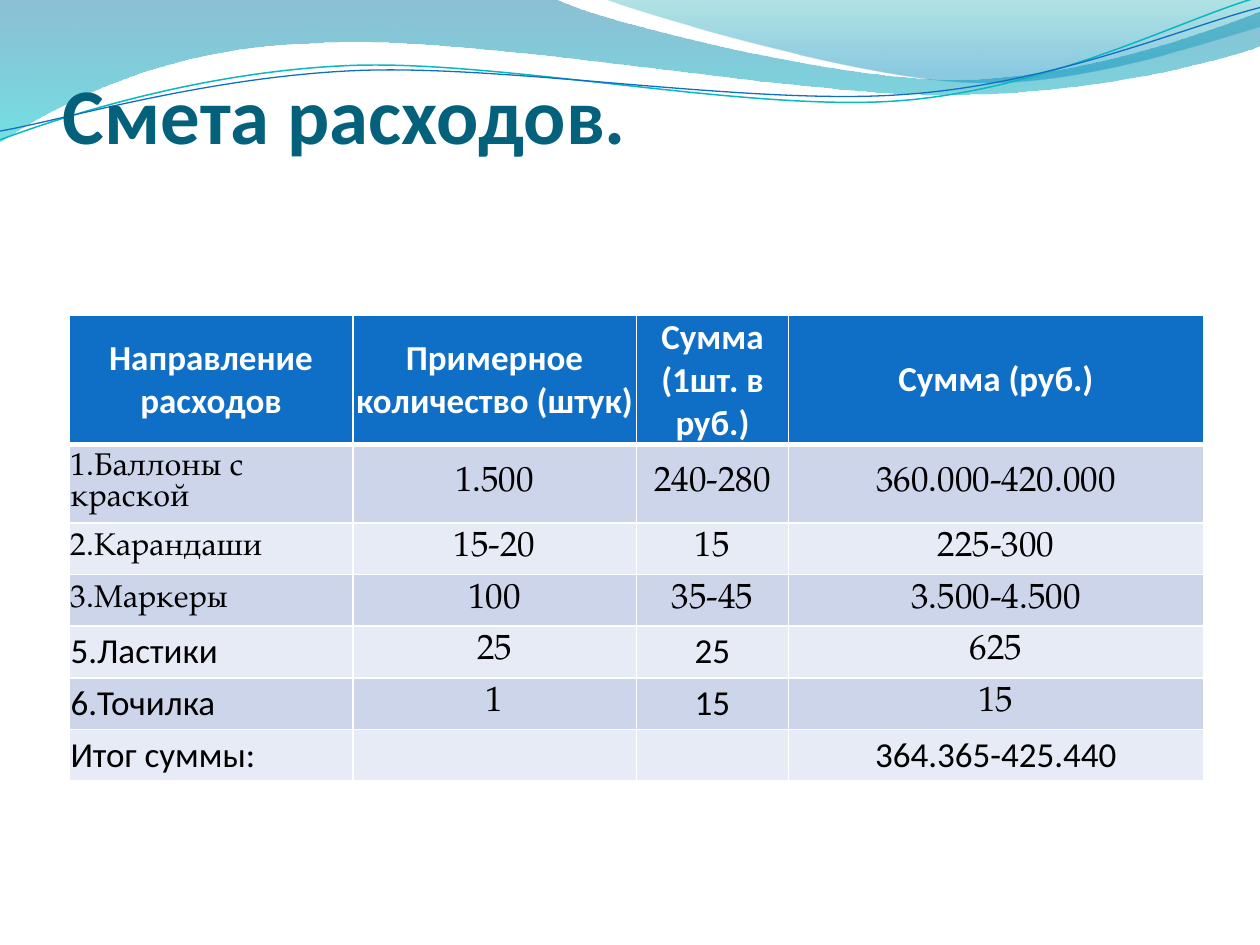
from math import cos, radians, sin

from lxml import etree
from pptx import Presentation
from pptx.dml.color import RGBColor
from pptx.enum.text import MSO_ANCHOR as Anchor, PP_ALIGN as Align
from pptx.oxml.ns import qn
from pptx.util import Inches, Pt

SANS, SERIF = "Calibri", "TeX Gyre Pagella"
LINE_TILT = -2.7
LINE_CENTER = (4.99, 0.58)

UPPER_WAVE = [
    [(0, 0)],
    [(4.4, -0.01)],
    [(4.76, 0.17), (6.64, 0.63), (7.58, 0.63)],
    [(8.53, 0.63), (9.58, 0.26), (10, 0.09)],
    [(10.01, 0.36)],
    [(9.83, 0.44), (8.7, 0.76), (7.46, 0.75)],
    [(6.22, 0.75), (3.82, 0.28), (2.57, 0.34)],
    [(1.29, 0.36), (0.46, 0.83), (-0.01, 1.13)],
    [(0, 0)],
]
RIGHT_WAVE = [
    [(4.79, -0.01)],
    [(5.09, 0.11), (6.82, 0.62), (7.69, 0.65)],
    [(8.56, 0.69), (9.61, 0.32), (10, 0.21)],
    [(10, 0)],
    [(4.79, -0.01)],
]
TEAL_LINE = [
    [(0, 1.11)],
    [(0.48, 0.93), (1.58, 0.57), (2.77, 0.52)],
    [(3.95, 0.47), (5.93, 0.89), (7.13, 0.8)],
    [(8.33, 0.71), (9.38, 0.15), (9.98, -0.02)],
]
BLUE_LINE = [
    [(0, 1.04)],
    [(0.47, 0.96), (1.64, 0.61), (2.83, 0.56)],
    [(4.03, 0.51), (5.97, 0.84), (7.17, 0.75)],
    [(8.36, 0.67), (9.41, 0.21), (10, 0.06)],
]

HEADERS = ["Направление расходов", "Примерное количество (штук)",
           "Сумма (1шт. в руб.)", "Сумма (руб.)"]
EXPENSES = [
    ["1.Баллоны с краской", "1.500", "240-280", "360.000-420.000"],
    ["2.Карандаши", "15-20", "15", "225-300"],
    ["3.Маркеры", "100", "35-45", "3.500-4.500"],
    ["5.Ластики", "25", "25", "625"],
    ["6.Точилка", "1", "15", "15"],
    ["Итог суммы:", "", "", "364.365-425.440"],
]
SERIF_ROWS = [1, 2, 3]
MIXED_ROWS = [4, 5]


def color(value):
    return RGBColor.from_string(value)


def level(point):
    angle = radians(-LINE_TILT)
    dx, dy = (value - middle for value, middle in zip(point, LINE_CENTER))
    return (LINE_CENTER[0] + dx * cos(angle) - dy * sin(angle),
            LINE_CENTER[1] + dx * sin(angle) + dy * cos(angle))


def add_curve(slide, left, top, segments, closed):
    points = [(Inches(left + x), Inches(top + y)) for segment in segments for x, y in segment]
    builder = slide.shapes.build_freeform(*points[0])
    builder.add_line_segments(points[1:], close=closed)
    shape = builder.convert_to_shape()
    shape.shadow.inherit = False
    steps = iter(list(shape._element.iter(qn("a:lnTo"))))
    for segment in segments[1:]:
        parts = [next(steps) for _ in segment]
        if len(parts) == 3:
            curve = etree.Element(qn("a:cubicBezTo"))
            parts[0].addprevious(curve)
            for part in parts:
                curve.append(part[0])
                part.getparent().remove(part)
    return shape


def add_wave(slide, left, top, segments, stops):
    shape = add_curve(slide, left, top, segments, True)
    shape.line.fill.background()
    shape.fill.gradient()
    shape.fill.gradient_angle = 270
    for stop, (position, value, _) in zip(shape.fill.gradient_stops, stops):
        stop.position = position
        stop.color.rgb = color(value)
    for node, (_, _, opacity) in zip(shape._element.spPr.iter(qn("a:srgbClr")), stops):
        etree.SubElement(node, qn("a:alpha")).set("val", str(opacity * 1000))


def add_wave_line(slide, left, top, segments, value, width):
    leveled = [[level(point) for point in segment] for segment in segments]
    shape = add_curve(slide, left, top, leveled, False)
    shape.rotation = LINE_TILT
    shape.fill.background()
    shape.line.color.rgb = color(value)
    shape.line.width = Pt(width)


def add_header_waves(slide, left, top):
    add_wave(slide, left, top, UPPER_WAVE, [(0, "0074A1", 45), (1, "00C6CF", 55)])
    add_wave(slide, left, top, RIGHT_WAVE, [(0, "00A1A9", 30), (0.8, "008BBF", 45)])
    add_wave_line(slide, left, top, TEAL_LINE, "0AB8BF", 0.85)
    add_wave_line(slide, left, top, BLUE_LINE, "0F6FC6", 0.75)


def style_font(font, name, size, value, bold=False):
    font.name, font.size, font.bold = name, Pt(size), bold
    font.color.rgb = color(value)


def add_title(slide, left, top, width, height):
    box = slide.shapes.add_textbox(Inches(left), Inches(top), Inches(width), Inches(height))
    frame = box.text_frame
    frame.word_wrap = True
    frame.vertical_anchor = Anchor.BOTTOM
    frame.margin_left = frame.margin_right = frame.margin_bottom = 0
    paragraph = frame.paragraphs[0]
    paragraph.text = "Смета расходов. \v"
    style_font(paragraph.font, SANS, 45, "04617B", True)


def set_borders(cell, widths):
    properties = cell._tc.get_or_add_tcPr()
    for index, (side, width) in enumerate(zip("LRTB", widths)):
        line = etree.Element(qn(f"a:ln{side}"), w=str(Pt(width)))
        fill = etree.SubElement(line, qn("a:solidFill"))
        etree.SubElement(fill, qn("a:srgbClr")).set("val", "FFFFFF")
        properties.insert(index, line)


def fill_cell(cell, text, row, column):
    header = row == 0
    serif = row in SERIF_ROWS or (row in MIXED_ROWS and column in (1, 3))
    cell.margin_left = cell.margin_right = cell.margin_top = cell.margin_bottom = Inches(0.01)
    cell.vertical_anchor = Anchor.MIDDLE
    cell.fill.solid()
    cell.fill.fore_color.rgb = color("0F6FC6" if header else ("E7EBF5", "CCD5EA")[row % 2])
    set_borders(cell, [1, 1, 3 if row == 1 else 1, 3 if header else 1])
    paragraph = cell.text_frame.paragraphs[0]
    paragraph.text = text
    paragraph.alignment = Align.CENTER if header or column else Align.LEFT
    size = 18 if row in SERIF_ROWS and column == 0 else 20
    style_font(paragraph.font, SERIF if serif else SANS, size,
               "FFFFFF" if header else "000000", header)


def add_expense_table(slide, left, top, column_widths, header_height, row_height):
    rows = [HEADERS] + EXPENSES
    heights = [header_height] + [row_height] * len(EXPENSES)
    table = slide.shapes.add_table(
        len(rows), len(HEADERS), Inches(left), Inches(top),
        Inches(sum(column_widths)), Inches(sum(heights))).table
    for column, width in zip(table.columns, column_widths):
        column.width = Inches(width)
    for row, texts in enumerate(rows):
        table.rows[row].height = Inches(heights[row])
        for column, text in enumerate(texts):
            fill_cell(table.cell(row, column), text, row, column)


def main():
    presentation = Presentation()
    presentation.slide_width, presentation.slide_height = Inches(10), Inches(7.5)
    slide = presentation.slides.add_slide(presentation.slide_layouts[6])
    add_header_waves(slide, 0, 0)
    add_title(slide, 0.5, 0.77, 9, 1.25)
    add_expense_table(slide, 0.55, 2.5, [2.25, 2.25, 1.21, 3.29], 1.03, 0.41)
    presentation.save("out.pptx")


if __name__ == "__main__":
    main()
